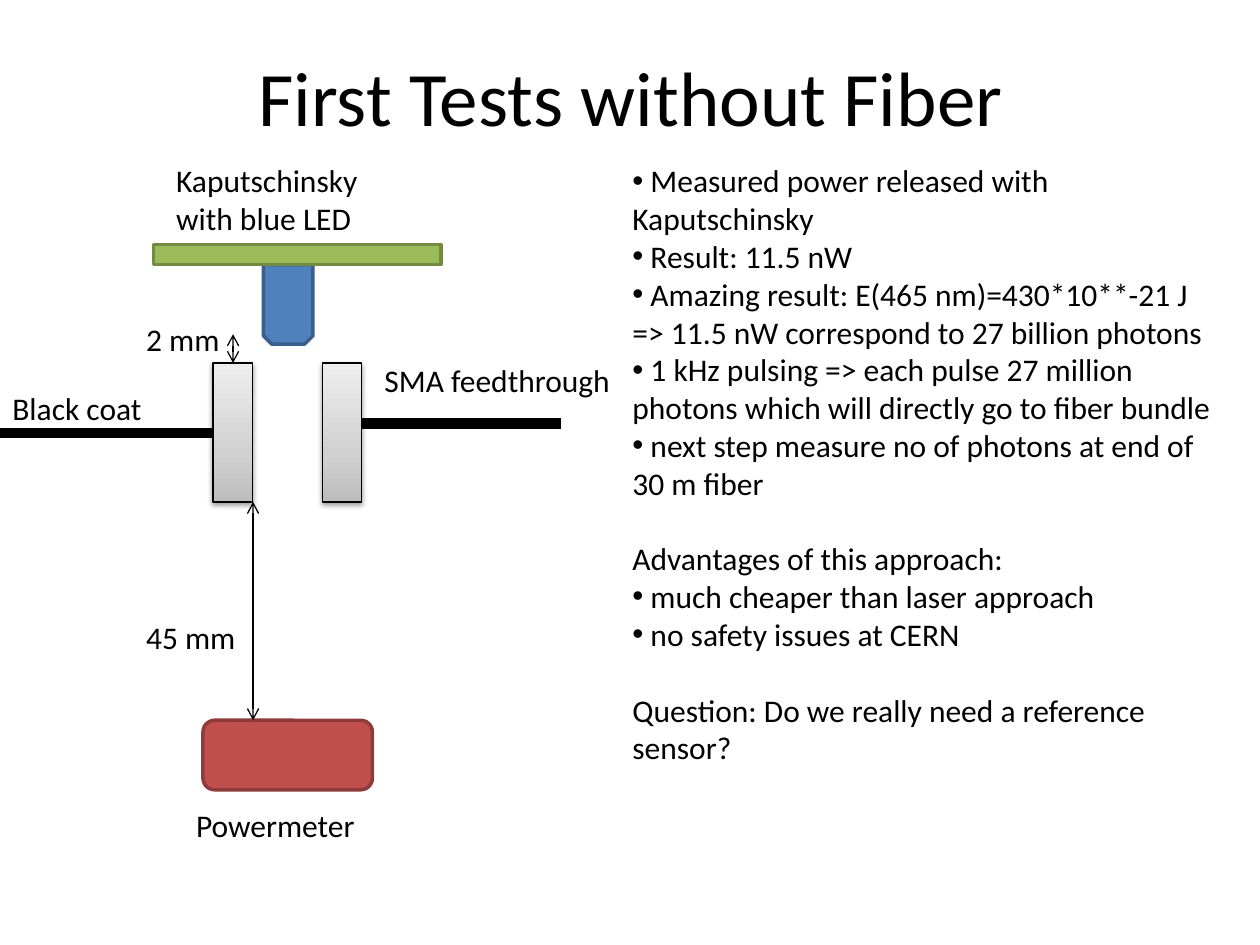
from copy import deepcopy

from lxml.etree import SubElement
from pptx import Presentation
from pptx.dml.color import RGBColor
from pptx.enum.shapes import MSO_CONNECTOR, MSO_SHAPE
from pptx.enum.text import MSO_ANCHOR, MSO_AUTO_SIZE, PP_ALIGN
from pptx.oxml.ns import qn
from pptx.util import Pt


def tint(code):
    return RGBColor.from_string(code)


def put(item, **vals):
    for name, val in vals.items():
        setattr(item, name, val)


class Deck:
    font = "Calibri"
    ink = "000000"
    size = 18
    steel = ((0, "BDBDBD"), (0.35, "D1D1D1"), (1, "EEEEEE"))

    def start(self):
        self.show = Presentation()
        put(self.show, slide_width=Pt(720), slide_height=Pt(540))
        self.slide = self.show.slides.add_slide(self.show.slide_layouts[1])
        self.shapes = self.slide.shapes

    def place(self, item, x, y, w, h):
        put(item, left=Pt(x), top=Pt(y), width=Pt(w), height=Pt(h))

    def words(self, para, text, size):
        run = para.add_run()
        put(run, text=text)
        put(run.font, name=self.font, size=Pt(size))
        run.font.color.rgb = tint(self.ink)

    def title(self, text, *box):
        head = self.shapes.title
        self.place(head, *box)
        put(head.text_frame, vertical_anchor=MSO_ANCHOR.MIDDLE,
            auto_size=MSO_AUTO_SIZE.NONE)
        para = head.text_frame.paragraphs[0]
        para.alignment = PP_ALIGN.CENTER
        self.words(para, text, 44)

    def body(self, rows, *box):
        """Rows are (text, bulleted, space before)."""
        item = self.slide.placeholders[1]
        self.place(item, *box)
        frame = item.text_frame
        frame.auto_size = MSO_AUTO_SIZE.NONE
        for i, (text, dot, gap) in enumerate(rows):
            para = frame.add_paragraph() if i else frame.paragraphs[0]
            para.space_before = Pt(gap)
            props = para._p.get_or_add_pPr()
            props.set("marL", "0")
            props.set("indent", "0")
            if dot:
                SubElement(props, qn("a:buChar")).set("char", "•")
            else:
                SubElement(props, qn("a:buNone"))
            self.words(para, text, self.size)

    def label(self, text, *box):
        frame = self.shapes.add_textbox(*map(Pt, box)).text_frame
        put(frame, word_wrap=True, auto_size=MSO_AUTO_SIZE.SHAPE_TO_FIT_TEXT)
        self.words(frame.paragraphs[0], text, self.size)

    def block(self, kind, box, edge, thick, fill=None, turn=0):
        item = self.shapes.add_shape(kind, *map(Pt, box))
        put(item, rotation=turn)
        put(item.shadow, inherit=False)
        put(item.line, width=Pt(thick))
        item.line.color.rgb = tint(edge)
        if fill:
            item.fill.solid()
            item.fill.fore_color.rgb = tint(fill)
        return item

    def tube(self, *box):
        item = self.block(MSO_SHAPE.RECTANGLE, box, self.ink, 0.75)
        # Three-stop gradient, dark at the bottom
        item.fill.gradient()
        item.fill.gradient_angle = 90
        props = item._element.spPr
        first = props.find(".//" + qn("a:gs"))
        first.addnext(deepcopy(first))
        for stop, (pos, code) in zip(item.fill.gradient_stops, self.steel):
            stop.position = pos
            stop.color.rgb = tint(code)
        # Soft shadow below
        cast = SubElement(props.find(qn("a:effectLst")), qn("a:outerShdw"))
        vals = dict(blurRad=Pt(3.1), dist=Pt(1.6), dir=90 * 60000,
                    rotWithShape=0)
        for name, val in vals.items():
            cast.set(name, str(int(val)))
        shade = SubElement(cast, qn("a:srgbClr"))
        shade.set("val", self.ink)
        SubElement(shade, qn("a:alpha")).set("val", "38000")

    def line(self, x1, y1, x2, y2, thick, tips=False):
        item = self.shapes.add_connector(
            MSO_CONNECTOR.STRAIGHT, *map(Pt, (x1, y1, x2, y2)))
        put(item.line, width=Pt(thick))
        item.line.color.rgb = tint(self.ink)
        props = item._element.spPr
        if tips:
            for end in ("a:headEnd", "a:tailEnd"):
                SubElement(props.find(qn("a:ln")), qn(end)).set("type", "arrow")
        SubElement(props, qn("a:effectLst"))


def main():
    deck = Deck()
    deck.start()
    deck.title("First Tests without Fiber", 36.5, 9.4, 648, 90)

    # LED on its driver board
    deck.block(MSO_SHAPE.SNIP_2_SAME_RECTANGLE, (150.5, 151.2, 28.3, 45.4),
               "3A5F8C", 2, "4F81BD", 180)
    deck.block(MSO_SHAPE.RECTANGLE, (87.8, 139.7, 164.2, 11.5),
               "738A42", 2, "9BBB59")

    # Feedthrough walls and black coat
    top, wide, high = 207.4, 22.6, 79.4
    left, right = 121.7, 184.1
    for x in (left, right):
        deck.tube(x, top, wide, high)
    deck.line(0, 247.5, left, 247.5, 6)
    deck.line(right + wide, 241.9, 320.4, 241.9, 6)

    # Powermeter
    base = 411.6
    deck.block(MSO_SHAPE.ROUNDED_RECTANGLE, (116, base, 96.8, 39.7),
               "8E3B39", 2, "C0504D")

    # Distances
    deck.line(133.2, 191, 133.2, top, 0.75, True)
    deck.line(144.6, top + high, 144.6, base, 0.75, True)

    # Labels
    for text, x, y, w, h in (
        ("SMA feedthrough", 212.6, 202.5, 170, 29),
        ("Black coat", 0, 219, 105, 29),
        ("Kaputschinsky with blue LED", 93.6, 88.6, 136, 51),
        ("Powermeter", 105, 457.2, 124.6, 29),
        ("2 mm", 76.4, 179.5, 79.4, 29),
        ("45 mm", 76.4, 349.5, 79.4, 29),
    ):
        deck.label(text, x, y, w, h)

    # Findings
    gap = 21.6
    deck.body((
        (" Measured power released with Kaputschinsky", True, 0),
        (" Result: 11.5 nW", True, 0),
        (" Amazing result: E(465 nm)=430*10**-21 J "
         "=> 11.5 nW correspond to 27 billion photons", True, 0),
        (" 1 kHz pulsing => each pulse 27 million photons "
         "which will directly go to fiber bundle", True, 0),
        (" next step measure no of photons at end of 30 m fiber", True, 0),
        ("Advantages of this approach:", False, gap),
        (" much cheaper than laser approach", True, 0),
        (" no safety issues at CERN", True, 0),
        ("Question: Do we really need a reference sensor?", False, gap),
    ), 354.2, 88.6, 345.6, 356.4)
    deck.show.save("out.pptx")


if __name__ == "__main__":
    main()
